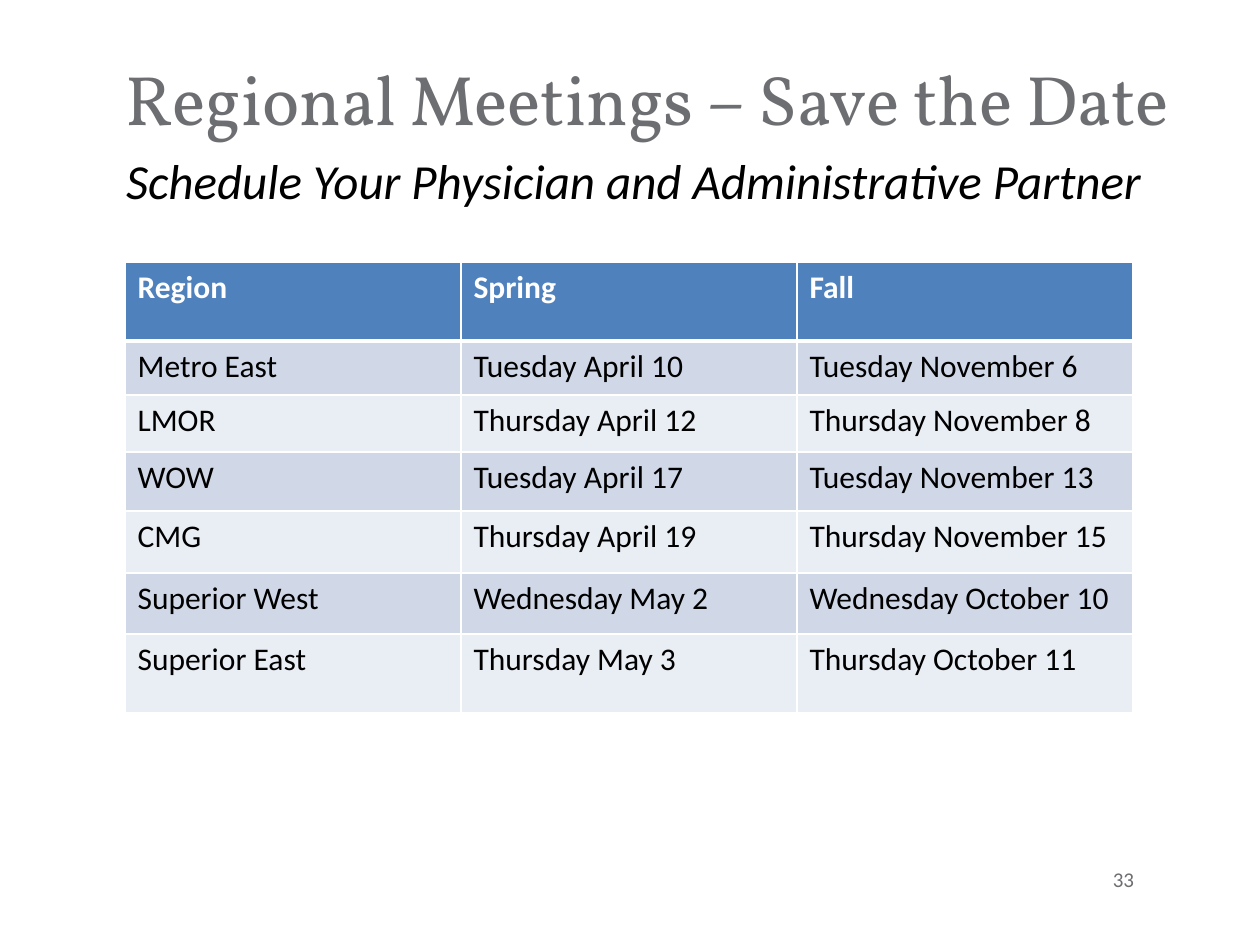
"""Build the regional meetings schedule slide."""
from dataclasses import dataclass

from lxml.etree import SubElement
from pptx import Presentation
from pptx.dml.color import RGBColor
from pptx.enum.text import MSO_ANCHOR as Anchor, PP_ALIGN as Align
from pptx.oxml.ns import qn
from pptx.slide import Slide
from pptx.table import _Cell as Cell
from pptx.text.text import _Paragraph as Paragraph
from pptx.util import Emu, Pt

PX_PER_INCH = 126
EMU_PER_INCH = 914400


@dataclass(frozen=True)
class TextStyle:
    font: str
    size: int
    color: str
    bold: bool = False
    italic: bool = False


@dataclass(frozen=True)
class Theme:
    title: TextStyle = TextStyle("Vollkorn", 40, "6D6E71")
    subtitle: TextStyle = TextStyle("Calibri", 28, "000000", italic=True)
    page_number: TextStyle = TextStyle("Calibri", 12, "6D6E71")
    header: TextStyle = TextStyle("Calibri", 18, "FFFFFF", bold=True)
    body: TextStyle = TextStyle("Calibri", 18, "000000")
    header_fill: str = "4F81BD"
    band_fills: tuple[str, str] = ("D0D8E8", "E9EDF4")
    border: str = "FFFFFF"
    thin_border: int = 1
    thick_border: int = 3


@dataclass(frozen=True)
class Label:
    text: str
    left: int
    top: int
    width: int
    height: int
    style: TextStyle
    align: Align = Align.LEFT
    anchor: Anchor = Anchor.TOP


@dataclass(frozen=True)
class Meeting:
    region: str
    spring: str
    fall: str
    height: int


THEME = Theme()
LABELS = (
    Label("Regional Meetings – Save the Date", 126, 55, 1071, 170, THEME.title),
    Label("33", 840, 842, 294, 50, THEME.page_number, Align.RIGHT, Anchor.BOTTOM),
    Label("Schedule Your Physician and Administrative Partner", 126, 151, 1050, 59, THEME.subtitle),
)
MEETINGS = (
    Meeting("Region", "Spring", "Fall", 79),
    Meeting("Metro East", "Tuesday April 10", "Tuesday November 6", 54),
    Meeting("LMOR", "Thursday April 12", "Thursday November 8", 57),
    Meeting("WOW", "Tuesday April 17", "Tuesday November 13", 59),
    Meeting("CMG", "Thursday April 19", "Thursday November 15", 62),
    Meeting("Superior West", "Wednesday May 2", "Wednesday October 10", 61),
    Meeting("Superior East", "Thursday May 3", "Thursday October 11", 79),
)
TABLE_LEFT, TABLE_TOP, COLUMN_WIDTH = 125, 262, 336


def px(length: int) -> Emu:
    """Turn pixels into EMU."""
    return Emu(round(length * EMU_PER_INCH / PX_PER_INCH))


def format_paragraph(paragraph: Paragraph, style: TextStyle) -> None:
    """Apply a text style to every run of a paragraph."""
    for run in paragraph.runs:
        run.font.name = style.font
        run.font.size = Pt(style.size)
        run.font.bold = style.bold
        run.font.italic = style.italic
        run.font.color.rgb = RGBColor.from_string(style.color)


def add_label(slide: Slide, label: Label) -> None:
    """Add a text box without insets."""
    shape = slide.shapes.add_textbox(px(label.left), px(label.top), px(label.width), px(label.height))
    text_frame = shape.text_frame
    text_frame.word_wrap = True
    text_frame.vertical_anchor = label.anchor
    text_frame.margin_left = text_frame.margin_right = 0
    text_frame.margin_top = text_frame.margin_bottom = 0
    text_frame.text = label.text
    paragraph = text_frame.paragraphs[0]
    paragraph.alignment = label.align
    format_paragraph(paragraph, label.style)


def add_borders(cell: Cell, top: int, bottom: int) -> None:
    """Draw the four solid borders of a cell."""
    properties = cell._tc.get_or_add_tcPr()
    widths = {"a:lnL": THEME.thin_border, "a:lnR": THEME.thin_border, "a:lnT": top, "a:lnB": bottom}
    for tag, width in widths.items():
        line = SubElement(properties, qn(tag), w=str(Pt(width)))
        fill = SubElement(line, qn("a:solidFill"))
        SubElement(fill, qn("a:srgbClr"), val=THEME.border)


def fill_cell(cell: Cell, text: str, row_index: int) -> None:
    """Write and format one cell according to its row."""
    is_header = row_index == 0
    cell.text_frame.text = text
    format_paragraph(cell.text_frame.paragraphs[0], THEME.header if is_header else THEME.body)
    add_borders(
        cell,
        top=THEME.thick_border if row_index == 1 else THEME.thin_border,
        bottom=THEME.thick_border if is_header else THEME.thin_border,
    )
    color = THEME.header_fill if is_header else THEME.band_fills[(row_index - 1) % 2]
    cell.fill.solid()
    cell.fill.fore_color.rgb = RGBColor.from_string(color)


def add_schedule(slide: Slide, meetings: tuple[Meeting, ...]) -> None:
    """Add the table of meetings with its header row."""
    height = sum(meeting.height for meeting in meetings)
    table = slide.shapes.add_table(
        len(meetings), 3, px(TABLE_LEFT), px(TABLE_TOP), px(3 * COLUMN_WIDTH), px(height)
    ).table
    for column in table.columns:
        column.width = px(COLUMN_WIDTH)
    for row_index, meeting in enumerate(meetings):
        table.rows[row_index].height = px(meeting.height)
        for column_index, text in enumerate((meeting.region, meeting.spring, meeting.fall)):
            fill_cell(table.cell(row_index, column_index), text, row_index)


def main() -> None:
    """Create and save the presentation."""
    presentation = Presentation()
    presentation.slide_width = px(1260)
    presentation.slide_height = px(945)
    slide = presentation.slides.add_slide(presentation.slide_layouts[6])
    for label in LABELS:
        add_label(slide, label)
    add_schedule(slide, MEETINGS)
    presentation.save("out.pptx")


if __name__ == "__main__":
    main()
